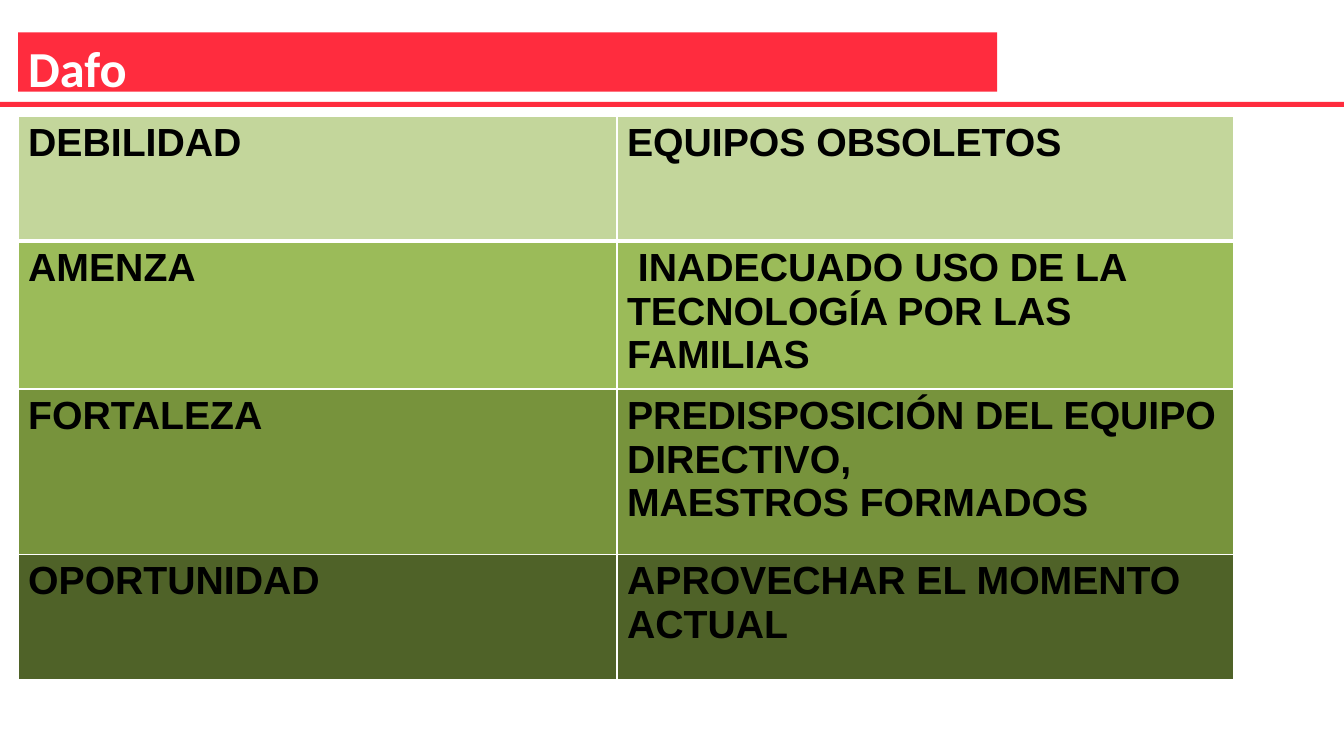
from lxml import etree
from pptx import Presentation
from pptx.dml.color import RGBColor
from pptx.enum.shapes import MSO_SHAPE
from pptx.enum.text import MSO_ANCHOR, PP_ALIGN
from pptx.oxml.ns import qn
from pptx.util import Inches, Pt

RECTANGLE = MSO_SHAPE.RECTANGLE
TOP = MSO_ANCHOR.TOP
LEFT = PP_ALIGN.LEFT

COLORS = {
    "red": "FF2C3E",
    "white": "FFFFFF",
    "black": "000000",
    "weakness": "C3D69B",
    "threat": "9BBB59",
    "strength": "77933C",
    "opportunity": "4F6228",
}
TITLE_FORMAT = {"name": "Calibri", "size": Pt(36), "bold": True}
CELL_FORMAT = {"name": "Arial", "size": Pt(28), "bold": True}

COLUMN_WIDTHS = [5.94, 6.12]
# Row height, fill, label, paragraphs of the right column
SWOT_ROWS = [
    (1.24, "weakness", "DEBILIDAD", ["EQUIPOS OBSOLETOS"]),
    (1.47, "threat", "AMENZA",
     [" INADECUADO USO DE LA TECNOLOGÍA POR LAS FAMILIAS"]),
    (1.64, "strength", "FORTALEZA",
     ["PREDISPOSICIÓN DEL EQUIPO DIRECTIVO,", "MAESTROS FORMADOS"]),
    (1.24, "opportunity", "OPORTUNIDAD", ["APROVECHAR EL MOMENTO ACTUAL"]),
]


def rgb(name):
    return RGBColor.from_string(COLORS[name])


def write_text(text_frame, lines, font_format, color):
    text_frame.word_wrap = True
    for index, line in enumerate(lines):
        paragraph = text_frame.add_paragraph() if index else text_frame.paragraphs[0]
        paragraph.alignment = LEFT
        run = paragraph.add_run()
        run.text = line
        for attribute, value in font_format.items():
            setattr(run.font, attribute, value)
        run.font.color.rgb = rgb(color)


def add_bar(slide, left, top, width, height):
    shape = slide.shapes.add_shape(
        RECTANGLE, Inches(left), Inches(top), Inches(width), Inches(height))
    shape.shadow.inherit = False
    shape.fill.solid()
    shape.fill.fore_color.rgb = rgb("red")
    shape.line.fill.background()
    return shape


def set_borders(cell, widths):
    """Draw white borders; widths maps each side tag to points."""
    properties = cell._tc.get_or_add_tcPr()
    for position, (side, width) in enumerate(widths.items()):
        line = etree.Element(qn(f"a:{side}"), w=str(Pt(width)))
        fill = etree.SubElement(line, qn("a:solidFill"))
        etree.SubElement(fill, qn("a:srgbClr"), val=COLORS["white"])
        properties.insert(position, line)


def add_swot_table(slide, left, top):
    height = sum(row[0] for row in SWOT_ROWS)
    table = slide.shapes.add_table(
        len(SWOT_ROWS), len(COLUMN_WIDTHS), Inches(left), Inches(top),
        Inches(sum(COLUMN_WIDTHS)), Inches(height)).table
    for column, width in zip(table.columns, COLUMN_WIDTHS):
        column.width = Inches(width)
    for index, (row_height, color, label, details) in enumerate(SWOT_ROWS):
        table.rows[index].height = Inches(row_height)
        # The rule under the first row is thicker
        borders = {"lnL": 1, "lnR": 1, "lnT": 3 if index == 1 else 1,
                   "lnB": 3 if index == 0 else 1}
        for cell, lines in zip(table.rows[index].cells, ([label], details)):
            cell.fill.solid()
            cell.fill.fore_color.rgb = rgb(color)
            cell.vertical_anchor = TOP
            write_text(cell.text_frame, lines, CELL_FORMAT, "black")
            set_borders(cell, borders)


def main():
    presentation = Presentation()
    presentation.slide_width = Inches(13.33)
    presentation.slide_height = Inches(7.5)
    slide = presentation.slides.add_slide(presentation.slide_layouts[6])

    # Header: full-width rule and title bar
    add_bar(slide, 0, 1.01, 13.33, 0.05)
    title = add_bar(slide, 0.18, 0.32, 9.71, 0.59)
    title.text_frame.vertical_anchor = TOP
    write_text(title.text_frame, ["Dafo"], TITLE_FORMAT, "white")

    # SWOT table
    add_swot_table(slide, 0.18, 1.15)

    presentation.save("out.pptx")


if __name__ == "__main__":
    main()
